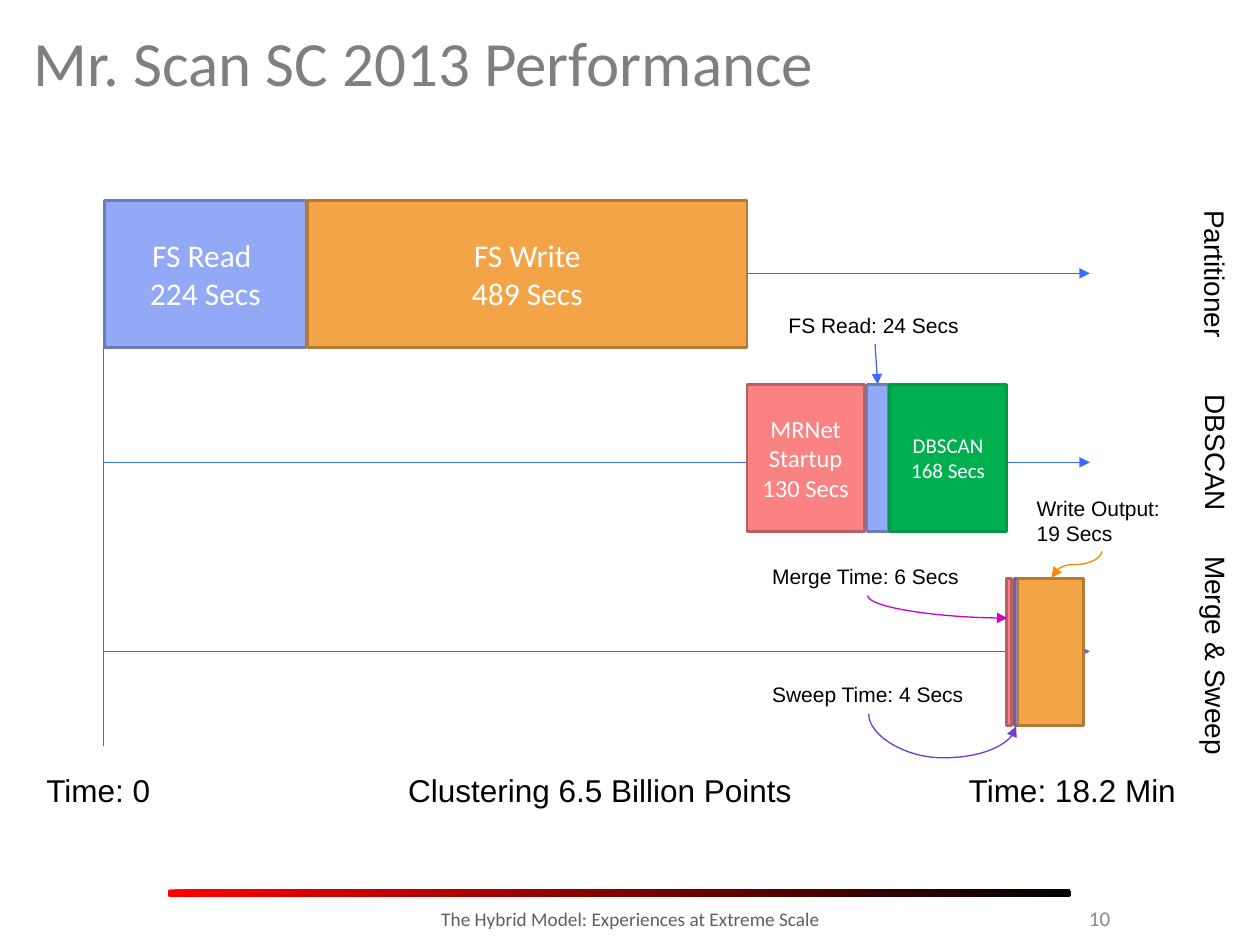
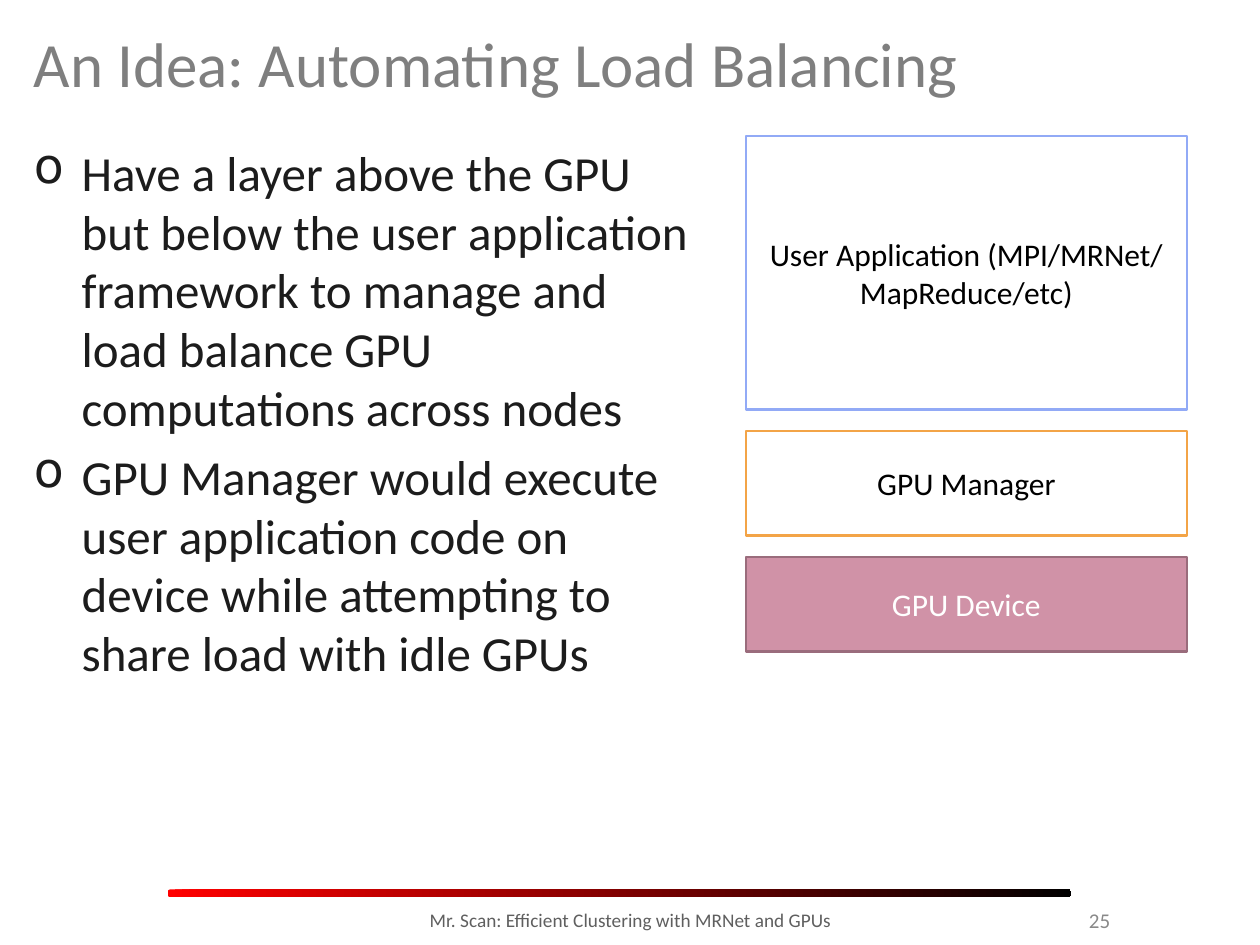
from dataclasses import dataclass

from lxml import etree
from pptx import Presentation
from pptx.dml.color import RGBColor
from pptx.enum import shapes, text
from pptx.oxml import ns
from pptx.util import Inches, Pt


@dataclass(frozen=True)
class Theme:
    heading_font: str = "Calibri"
    label_font: str = "Arial"
    title_color: str = "7F7F7F"
    body_color: str = "1C1C1C"
    footer_color: str = "5F5F5F"
    number_color: str = "898989"
    black: str = "000000"
    white: str = "FFFFFF"
    red: str = "FF0000"
    axis: str = "3B6AFF"
    merge_arrow: str = "CC00CC"
    sweep_arrow: str = "733BC9"
    output_arrow: str = "FB8800"
    # (fill, line) pairs
    blue: tuple = ("92AAF6", "6C7EB6")
    orange: tuple = ("F3A447", "B47935")
    pink: tuple = ("FA8282", "B96060")
    green: tuple = ("00B050", "009A46")
    purple: tuple = ("9C85C0", "73628E")
    mauve: tuple = ("D092A7", "9A6C7C")
    title_size: int = 36
    body_size: int = 28
    large: int = 18
    row_size: int = 16
    medium: int = 14
    small: int = 12
    footer_size: int = 11
    box_line: float = 1.5
    thin_line: float = 0.75


THEME = Theme()
CENTER = text.PP_ALIGN.CENTER
MIDDLE = text.MSO_ANCHOR.MIDDLE


def rgb(value):
    return RGBColor.from_string(value)


def inches(values):
    return [Inches(value) for value in values]


def write(shape, lines, size, color, font, align=None, anchor=None):
    """Fill a shape with one paragraph per line and return the paragraphs."""
    frame = shape.text_frame
    frame.word_wrap = True
    if anchor is not None:
        frame.vertical_anchor = anchor
    for index, line in enumerate(lines):
        paragraph = frame.add_paragraph() if index else frame.paragraphs[0]
        paragraph.alignment = align
        run = paragraph.add_run()
        run.text = line
        run.font.name = font
        run.font.size = Pt(size)
        run.font.color.rgb = rgb(color)
    return frame.paragraphs


def add_text(slide, at, lines, size, color, font, align=None, anchor=None):
    shape = slide.shapes.add_textbox(*inches(at))
    write(shape, lines, size, color, font, align, anchor)
    return shape


def add_label(slide, at, *lines, size=THEME.small, rotation=0):
    shape = add_text(slide, at, lines, size, THEME.black, THEME.label_font)
    shape.rotation = rotation
    return shape


def add_block(slide, at, colors, *lines, size=THEME.large, color=THEME.white):
    shape = slide.shapes.add_shape(shapes.MSO_SHAPE.RECTANGLE, *inches(at))
    shape.shadow.inherit = False
    fill, line = colors
    shape.fill.solid()
    shape.fill.fore_color.rgb = rgb(fill)
    shape.line.color.rgb = rgb(line)
    shape.line.width = Pt(THEME.box_line)
    if lines:
        write(shape, lines, size, color, THEME.heading_font, CENTER, MIDDLE)
    return shape


def style_connector(connector, color, arrow=True):
    connector.line.color.rgb = rgb(color)
    connector.line.width = Pt(THEME.thin_line)
    if arrow:
        line = connector.line._get_or_add_ln()
        etree.SubElement(line, ns.qn("a:tailEnd"), type="triangle")
    etree.SubElement(connector._element.spPr, ns.qn("a:effectLst"))


def add_line(slide, start, end, color=THEME.axis, arrow=True):
    connector = slide.shapes.add_connector(
        shapes.MSO_CONNECTOR.STRAIGHT, *inches(start + end))
    style_connector(connector, color, arrow)
    return connector


def add_curve(slide, at, rotation, color, flip=False, bends=3, bend=None):
    """Add a curved arrow; at is its frame before it is turned."""
    left, top, width, height = at
    connector = slide.shapes.add_connector(
        shapes.MSO_CONNECTOR.CURVE,
        *inches((left, top, left + width, top + height)))
    properties = connector._element.spPr
    frame = properties.find(ns.qn("a:xfrm"))
    frame.set("rot", str(rotation * 60000))
    if flip:
        frame.set("flipH", "1")
    geometry = properties.find(ns.qn("a:prstGeom"))
    geometry.set("prst", f"curvedConnector{bends}")
    if bend is not None:
        guides = geometry.find(ns.qn("a:avLst"))
        if guides is None:
            guides = etree.SubElement(geometry, ns.qn("a:avLst"))
        etree.SubElement(guides, ns.qn("a:gd"), name="adj1",
                         fmla=f"val {round(bend * 100000)}")
    style_connector(connector, color)


def add_bullets(slide, at, items):
    shape = slide.shapes.add_textbox(*inches(at))
    paragraphs = write(shape, items, THEME.body_size, THEME.body_color,
                       THEME.heading_font)
    for index, paragraph in enumerate(paragraphs):
        properties = paragraph._p.get_or_add_pPr()
        properties.set("marL", str(Inches(0.38)))
        properties.set("indent", str(Inches(-0.38)))
        etree.SubElement(properties, ns.qn("a:buChar"), char="o")
        if index:
            paragraph.space_before = Pt(0.2 * THEME.body_size)


def add_footer_bar(slide):
    bar = slide.shapes.add_shape(shapes.MSO_SHAPE.ROUNDED_RECTANGLE,
                                 *inches((1.33, 7.06, 7.17, 0.06)))
    bar.adjustments[0] = 0.33
    bar.shadow.inherit = False
    bar.line.fill.background()
    bar.fill.gradient()
    bar.fill.gradient_angle = 0
    for stop, color in zip(bar.fill.gradient_stops, (THEME.red, THEME.black)):
        stop.color.rgb = rgb(color)


def new_slide(presentation, title, footer, number, drop=0):
    """Add a slide with its title, bar and footer, lowered by drop."""
    slide = presentation.slides.add_slide(presentation.slide_layouts[6])
    add_footer_bar(slide)
    font = THEME.heading_font
    add_text(slide, (0.17, 0.07 + drop, 9.67, 0.83), [title],
             THEME.title_size, THEME.title_color, font, anchor=MIDDLE)
    add_text(slide, (7.58, 7.09 + drop, 1.33, 0.4), [number], THEME.small,
             THEME.number_color, font, text.PP_ALIGN.RIGHT, MIDDLE)
    add_text(slide, (2.42, 7.15 + drop, 5.17, 0.4), [footer],
             THEME.footer_size, THEME.footer_color, font, CENTER)
    return slide


def add_time_axes(slide):
    left, right = 0.82, 8.65
    for row in range(3):
        y = 2.17 + 1.5 * row
        add_line(slide, (left, y), (right, y))
    add_line(slide, (left, 1.76), (left, 5.92), arrow=False)

    add_label(slide, (0.27, 6.07, 1.1, 0.4), "Time: 0", size=THEME.large)
    add_label(slide, (3.14, 6.07, 3.42, 0.4), "Clustering 6.5 Billion Points",
              size=THEME.large)
    add_label(slide, (7.59, 6.07, 1.93, 0.4), "Time: 18.2 Min",
              size=THEME.large)

    for at, name in (((7.98, 3.05, 3.33, 0.37), "Partitioner"),
                     ((8.9, 3.6, 1.5, 0.37), "DBSCAN"),
                     ((8.75, 5.03, 1.8, 0.37), "Merge & Sweep")):
        add_label(slide, at, name, size=THEME.row_size, rotation=90)


def build_performance(presentation):
    slide = new_slide(presentation, "Mr. Scan SC 2013 Performance",
                      "The Hybrid Model: Experiences at Extreme Scale", "10")
    add_time_axes(slide)
    height = 1.17
    partitioner, dbscan, merge = 1.59, 3.05, 4.59

    add_block(slide, (0.83, partitioner, 1.6, height), THEME.blue,
              "FS Read ", "224 Secs")
    add_block(slide, (2.44, partitioner, 3.49, height), THEME.orange,
              "FS Write", "489 Secs")

    add_block(slide, (5.93, dbscan, 0.93, height), THEME.pink,
              "MRNet", "Startup", "130 Secs", size=THEME.medium)
    read_block = add_block(slide, (6.88, dbscan, 0.17, height), THEME.blue)
    add_block(slide, (7.06, dbscan, 0.93, height), THEME.green,
              "DBSCAN", "168 Secs", size=THEME.small)

    for left, width, colors in ((7.99, 0.04, THEME.pink),
                                (8.05, 0.04, THEME.purple),
                                (8.08, 0.52, THEME.orange)):
        add_block(slide, (left, merge, width, height), colors)

    read_label = add_label(slide, (6.16, 2.43, 1.57, 0.3), "FS Read: 24 Secs")
    add_label(slide, (6.03, 4.42, 1.7, 0.3), "Merge Time: 6 Secs")
    add_label(slide, (6.03, 5.36, 1.73, 0.3), "Sweep Time: 4 Secs")
    add_label(slide, (8.13, 3.88, 1.24, 0.5), "Write Output:", "19 Secs")

    read_arrow = add_line(slide, (6.94, 2.74), (6.96, dbscan))
    read_arrow.begin_connect(read_label, 2)
    read_arrow.end_connect(read_block, 0)
    add_curve(slide, (7.35, 4.26, 0.18, 1.11), 270, THEME.merge_arrow,
              flip=True, bends=2)
    add_curve(slide, (7.43, 5.13, 0.1, 1.17), 270, THEME.sweep_arrow,
              flip=True, bend=3.5)
    add_curve(slide, (8.44, 4.28, 0.21, 0.4), 90, THEME.output_arrow)


def build_load_balancing(presentation):
    slide = new_slide(presentation, "An Idea: Automating Load Balancing",
                      "Mr. Scan: Efficient Clustering with MRNet and GPUs",
                      "25", drop=0.01)
    add_bullets(slide, (0.17, 1.08, 5.5, 5.67), [
        "Have a layer above the GPU but below the user application framework "
        "to manage and load balance GPU computations across nodes",
        "GPU Manager would execute user application code on device while "
        "attempting to share load with idle GPUs",
    ])

    layers = (
        (2.17, (THEME.white, THEME.blue[0]), THEME.black,
         ("User Application (MPI/MRNet/", "MapReduce/etc)")),
        (0.83, (THEME.white, THEME.orange[0]), THEME.black, ("GPU Manager",)),
        (0.75, THEME.mauve, THEME.white, ("GPU Device",)),
    )
    top, gap = 1.08, 0.17
    for height, colors, color, lines in layers:
        add_block(slide, (5.92, top, 3.5, height), colors, *lines, color=color)
        top += height + gap


def main():
    presentation = Presentation()
    presentation.slide_width = Inches(10)
    presentation.slide_height = Inches(7.5)
    build_performance(presentation)
    build_load_balancing(presentation)
    presentation.save("out.pptx")


if __name__ == "__main__":
    main()
